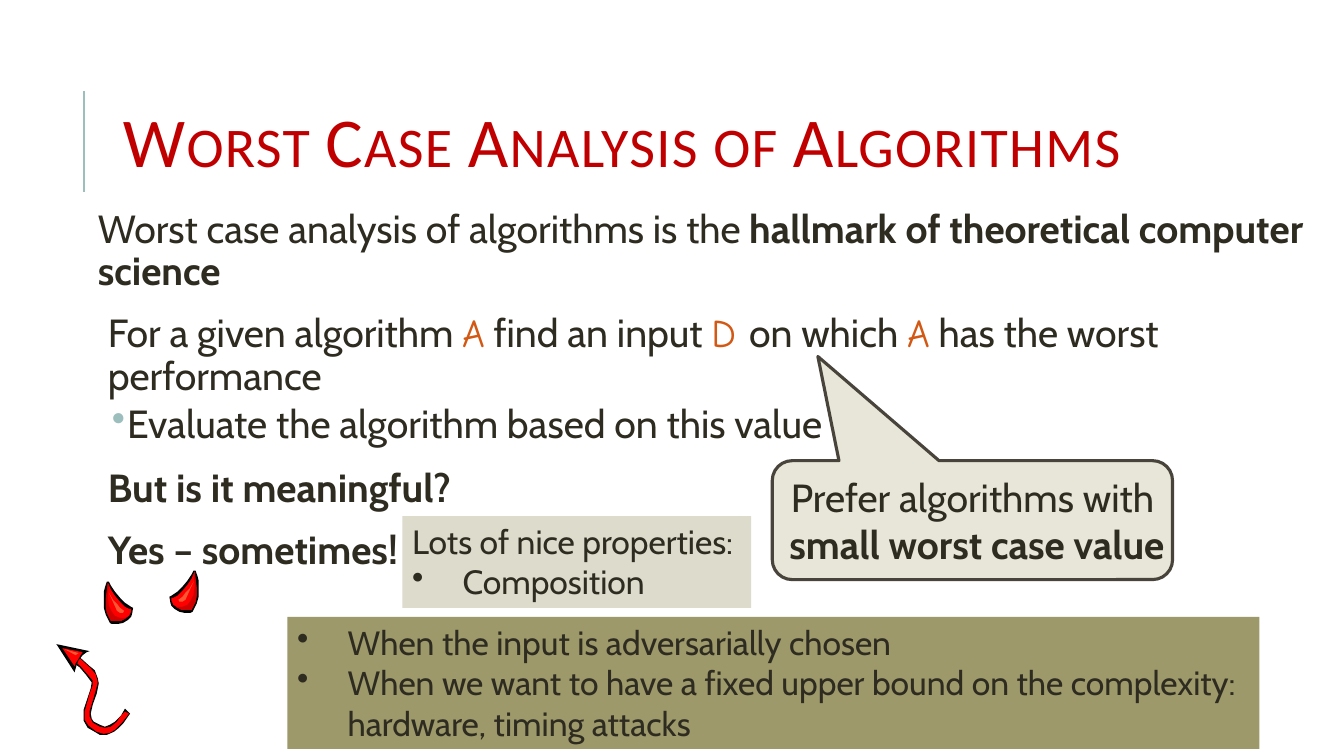
"""Build the slide on worst case analysis of algorithms."""
import lxml.etree
import pptx
import pptx.dml.color
import pptx.enum.shapes
import pptx.enum.text
import pptx.oxml.ns
import pptx.util

Inches = pptx.util.Inches
Pt = pptx.util.Pt
RGBColor = pptx.dml.color.RGBColor
MSO_SHAPE = pptx.enum.shapes.MSO_SHAPE
PP_ALIGN = pptx.enum.text.PP_ALIGN
MSO_ANCHOR = pptx.enum.text.MSO_ANCHOR
qn = pptx.oxml.ns.qn

INK = RGBColor(0x2E, 0x2B, 0x21)
TITLE_RED = RGBColor(0xC0, 0x00, 0x00)
SYMBOL_ORANGE = RGBColor(0xD2, 0x58, 0x14)
TEAL = RGBColor(0x9C, 0xBE, 0xBD)
CALLOUT_FILL = RGBColor(0xE8, 0xE6, 0xD8)
CALLOUT_EDGE = RGBColor(0x48, 0x44, 0x3B)
OLIVE = RGBColor(0x9D, 0x99, 0x6A)
PALE_OLIVE = RGBColor(0xDD, 0xDB, 0xCB)
BLACK = RGBColor(0x00, 0x00, 0x00)
RED = RGBColor(0xFF, 0x00, 0x00)
DARK_RED = RGBColor(0xCF, 0x00, 0x00)
GLOW = RGBColor(0xFC, 0x57, 0x33)

# Outlines are in hundredths of an inch.
HORN = [
    (BLACK, [(170, 591), (176, 587), (181, 582), (186, 576), (190, 570), (192, 566),
             (194, 566), (196, 572), (197, 576), (197, 592), (195, 599), (191, 607),
             (189, 608), (183, 608), (178, 607), (173, 604), (170, 601), (169, 598),
             (168, 592)]),
    (RED, [(170, 593), (172, 593), (176, 591), (181, 586), (186, 580), (190, 574),
           (193, 567), (195, 583), (195, 591), (194, 597), (190, 605), (184, 605),
           (180, 605), (175, 602), (172, 600), (170, 596)]),
    (DARK_RED, [(192, 570), (193, 567), (195, 583), (195, 591), (194, 597), (190, 605),
                (184, 605), (180, 605), (174, 602), (181, 602), (186, 600), (189, 596),
                (192, 590), (193, 582), (193, 578)]),
    (GLOW, [(177, 595), (181, 592), (184, 588), (188, 584), (192, 577), (188, 586),
            (184, 595), (181, 597), (178, 597)]),
]
TAIL = [
    (BLACK, [(114, 716), (109, 719), (104, 721), (99, 719), (93, 716), (91, 713),
             (90, 708), (92, 699), (96, 688), (98, 678), (97, 673), (94, 665),
             (88, 660), (78, 651), (71, 645), (64, 644), (61, 645), (64, 650),
             (69, 655), (79, 662), (85, 669), (91, 677), (90, 683), (86, 695),
             (83, 704), (83, 715), (87, 722), (94, 726), (99, 729), (106, 729),
             (113, 726), (118, 722), (122, 718), (129, 708), (124, 703), (120, 710)]),
    (RED, [(116, 716), (110, 721), (104, 722), (99, 721), (92, 717), (89, 711),
           (89, 705), (93, 692), (96, 681), (97, 677), (95, 669), (90, 663),
           (78, 652), (70, 647), (61, 646), (64, 651), (73, 655), (80, 661),
           (86, 668), (92, 675), (92, 680), (89, 688), (84, 706), (84, 714),
           (88, 720), (96, 726), (103, 728), (109, 727), (114, 724), (121, 717),
           (128, 708), (124, 706), (120, 710)]),
    (BLACK, [(89, 646), (86, 647), (82, 650), (78, 655), (76, 660), (74, 667), (56, 639)]),
    (RED, [(77, 655), (75, 658), (74, 661), (62, 643), (82, 647), (80, 650)]),
    (GLOW, [(78, 648), (64, 644), (75, 650)]),
]


def set_bullet(paragraph, margin, hanging, color=None):
    """Give a paragraph a round bullet with a hanging indent."""
    properties = paragraph._p.get_or_add_pPr()
    properties.set("marL", str(Inches(margin)))
    properties.set("indent", str(-Inches(hanging)))
    bullet = lxml.etree.Element(qn("a:buChar"), char="•")
    parts = [bullet]
    if color is not None:
        bullet_color = lxml.etree.Element(qn("a:buClr"))
        lxml.etree.SubElement(bullet_color, qn("a:srgbClr"), val=str(color))
        parts.insert(0, bullet_color)
    place = 0
    for child in properties:
        if child.tag in (qn("a:lnSpc"), qn("a:spcBef"), qn("a:spcAft")):
            place += 1
    properties[place:place] = parts


def write_paragraph(frame, index, pieces, size, bold=None):
    """Write (text, style) pieces into the paragraph at index and return it."""
    paragraph = frame.add_paragraph() if index else frame.paragraphs[0]
    paragraph.alignment = PP_ALIGN.LEFT
    font = paragraph.font
    font.name, font.size, font.bold = "Cabin", Pt(size), bold
    font.color.rgb = INK
    for text, style in pieces:
        run = paragraph.add_run()
        run.text = text
        if style == "bold":
            run.font.bold = True
        elif style == "symbol":
            run.font.name = "Comic Neue"
            run.font.color.rgb = SYMBOL_ORANGE
    return paragraph


def draw_title(slide, left, top, width, height):
    """Place the title and the upright rule to its left."""
    rule_x = Inches(left - 0.29)
    rule = slide.shapes.add_connector(
        pptx.enum.shapes.MSO_CONNECTOR.STRAIGHT,
        rule_x, Inches(top + 1.26), rule_x, Inches(top + 0.26))
    rule.line.color.rgb, rule.line.width = TEAL, Pt(1.5)
    lxml.etree.SubElement(rule._element.spPr, qn("a:effectLst"))
    frame = slide.shapes.add_textbox(
        Inches(left), Inches(top), Inches(width), Inches(height)).text_frame
    frame.word_wrap, frame.vertical_anchor = True, MSO_ANCHOR.MIDDLE
    heading = write_paragraph(frame, 0, [("Worst Case Analysis of Algorithms", "")], 50)
    heading.line_spacing = 0.8
    heading.font.name, heading.font.color.rgb = "Calibri", TITLE_RED
    letters = heading.runs[0]._r.get_or_add_rPr()
    letters.set("cap", "small")
    letters.set("spc", "100")


def draw_argument(slide, left, top, width, height):
    """Place the main text of the slide."""
    frame = slide.shapes.add_textbox(
        Inches(left), Inches(top), Inches(width), Inches(height)).text_frame
    frame.word_wrap = True
    frame.margin_left = frame.margin_right = Inches(0.05)
    frame.margin_top = frame.margin_bottom = Inches(0.05)
    statements = [
        ("lead", None, [("Worst case analysis of algorithms is the ", ""),
                        ("hallmark of theoretical computer science", "bold")]),
        ("point", None, [("For a given algorithm ", ""), ("A", "symbol"),
                         (" find an input ", ""), ("D ", "symbol"), ("on which ", ""),
                         ("A", "symbol"), (" has the worst performance", "")]),
        ("detail", None, [("Evaluate the algorithm based on this value", "")]),
        ("point", True, [("But is it meaningful?", "")]),
        ("point", True, [("Yes – sometimes!", "")]),
    ]
    for index, (role, bold, pieces) in enumerate(statements):
        statement = write_paragraph(frame, index, pieces, 28, bold)
        statement.line_spacing = 0.9
        before, after = (2, 4) if role == "detail" else (12, 2)
        statement.space_before, statement.space_after = Pt(before), Pt(after)
        if role == "detail":
            statement.level = 1
            set_bullet(statement, 0.29, 0.15, TEAL)
        elif role == "point":
            statement._p.get_or_add_pPr().set("marL", str(Inches(0.1)))


def add_panel(slide, kind, box, fill):
    """Add a filled shape without outline or shadow and return it."""
    panel = slide.shapes.add_shape(kind, *map(Inches, box))
    panel.shadow.inherit = False
    panel.fill.solid()
    panel.fill.fore_color.rgb = fill
    panel.line.fill.background()
    return panel


def draw_callout(slide, *box):
    """Place the speech callout that points at the main text."""
    callout = add_panel(slide, MSO_SHAPE.ROUNDED_RECTANGULAR_CALLOUT, box, CALLOUT_FILL)
    callout.line.color.rgb, callout.line.width = CALLOUT_EDGE, Pt(2.25)
    for index, value in enumerate((-0.386, -1.376, 0.167)):
        callout.adjustments[index] = value
    frame = callout.text_frame
    frame.word_wrap, frame.vertical_anchor = False, MSO_ANCHOR.MIDDLE
    for index, text in enumerate(("Prefer algorithms with", " small worst case value")):
        advice = write_paragraph(frame, index, [(text, "")], 28, index == 1)
        advice.alignment = PP_ALIGN.CENTER


def draw_note(slide, box, fill, items, heading=None):
    """Place a coloured note with an optional heading above its bullets."""
    frame = add_panel(slide, MSO_SHAPE.RECTANGLE, box, fill).text_frame
    frame.word_wrap, frame.vertical_anchor = True, MSO_ANCHOR.TOP
    lines = [heading, *items] if heading else items
    for index, text in enumerate(lines):
        line = write_paragraph(frame, index, [(text, "")], 24)
        if text != heading:
            set_bullet(line, 0.5, 0.5)


def draw_outlines(slide, layers, place=lambda x, y: (x, y)):
    """Draw filled outlines, each point moved by place."""
    for color, points in layers:
        start, *rest = [place(x, y) for x, y in points]
        builder = slide.shapes.build_freeform(*start, scale=Inches(0.01))
        builder.add_line_segments(rest, close=True)
        outline = builder.convert_to_shape()
        outline.shadow.inherit = False
        outline.fill.solid()
        outline.fill.fore_color.rgb = color
        outline.line.fill.background()


def main():
    """Build and save the slide."""
    deck = pptx.Presentation()
    deck.slide_width, deck.slide_height = Inches(13.33), Inches(7.5)
    slide = deck.slides.add_slide(deck.slide_layouts[6])
    draw_title(slide, 1.12, 0.64, 10.63, 1.64)
    draw_argument(slide, 0.92, 2.03, 12.15, 4.95)
    draw_callout(slide, 7.66, 4.57, 3.97, 1.18)
    draw_outlines(slide, TAIL)
    draw_outlines(slide, HORN)
    draw_outlines(slide, HORN, lambda x, y: (300 - x, y + 11))
    draw_note(slide, (2.85, 6.12, 9.64, 1.31), OLIVE, [
        "When the input is adversarially chosen",
        "When we want to have a fixed upper bound on the complexity: "
        "hardware, timing attacks"])
    draw_note(slide, (3.99, 5.12, 3.46, 0.91), PALE_OLIVE, ["Composition"],
              "Lots of nice properties:")
    deck.save("out.pptx")


if __name__ == "__main__":
    main()
